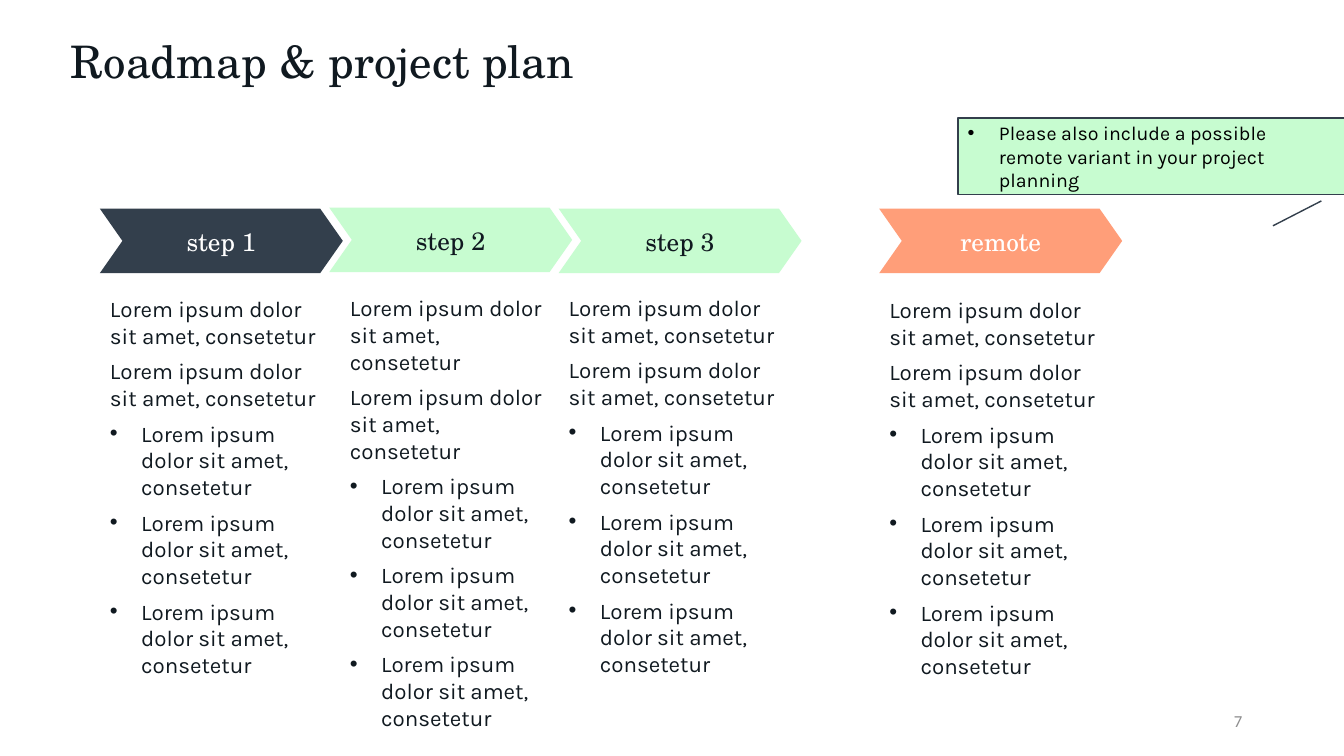
from dataclasses import dataclass

from lxml import etree
from pptx import Presentation
from pptx.dml.color import RGBColor
from pptx.enum.shapes import MSO_SHAPE
from pptx.enum.text import MSO_ANCHOR, MSO_AUTO_SIZE, PP_ALIGN
from pptx.oxml.ns import qn
from pptx.util import Inches, Pt

CHEVRON, CALLOUT = MSO_SHAPE.CHEVRON, MSO_SHAPE.LINE_CALLOUT_1
TOP, MIDDLE = MSO_ANCHOR.TOP, MSO_ANCHOR.MIDDLE
LEFT, CENTER, RIGHT = PP_ALIGN.LEFT, PP_ALIGN.CENTER, PP_ALIGN.RIGHT
NO_FIT = MSO_AUTO_SIZE.NONE
COMPARISON = 4  # layout with a title and four body placeholders


@dataclass(frozen=True)
class Theme:
    ink: str = "101920"
    slate: str = "333F4C"
    mint: str = "C7FCD0"
    coral: str = "FF9E79"
    white: str = "FFFFFF"
    black: str = "000000"
    gray: str = "8C8C8D"
    serif: str = "TeX Gyre Schola"
    sans: str = "Karla"
    number: str = "Calibri"
    title_pt: int = 32
    step_pt: int = 18
    body_pt: int = 16
    note_pt: int = 14
    number_pt: int = 12


T = Theme()
LOREM = "Lorem ipsum dolor sit amet, consetetur"
INDENT = 0.31
STEP_W, STEP_H, STEP_PITCH = 2.41, 0.64, 2.275
FIRST_X, REMOTE_X = 0.99, 8.72

# label, left, chevron top, fill, label colour, text left, text top, text width
STEPS = [
    ("step 1", FIRST_X, 2.07, T.slate, T.white, FIRST_X, 2.88, STEP_W),
    ("step 2", FIRST_X + STEP_PITCH, 2.06, T.mint, T.ink, 3.37, 2.87, 2.18),
    ("step 3", FIRST_X + 2 * STEP_PITCH, 2.07, T.mint, T.ink, 5.54, 2.87, STEP_W),
    ("remote", REMOTE_X, 2.07, T.coral, T.white, REMOTE_X, 2.89, STEP_W),
]
COLUMN_H = 4


def place(sp, left, top, width, height):
    box = {"left": left, "top": top, "width": width, "height": height}
    for name, value in box.items():
        setattr(sp, name, Inches(value))


def set_frame(sp, anchor=TOP, inset=None):
    tf = sp.text_frame
    frame = {"word_wrap": True, "auto_size": NO_FIT, "vertical_anchor": anchor}
    margins = {}
    if inset is not None:
        margins = {f"margin_{side}": Inches(inset)
                   for side in ("left", "right", "top", "bottom")}
    for name, value in {**frame, **margins}.items():
        setattr(tf, name, value)
    return tf


def set_bullet(p, bullet):
    pPr = p._p.get_or_add_pPr()
    pPr.set("marL", str(Inches(INDENT) if bullet else 0))
    pPr.set("indent", str(-Inches(INDENT) if bullet else 0))
    if bullet:
        etree.SubElement(pPr, qn("a:buFont")).set("typeface", "Arial")
        etree.SubElement(pPr, qn("a:buChar")).set("char", "•")
    else:
        etree.SubElement(pPr, qn("a:buNone"))


def write(p, text, font, size, color, align=LEFT, spacing=1.0, before=0, bullet=False):
    set_bullet(p, bullet)
    layout = {"alignment": align, "line_spacing": spacing,
              "space_before": Pt(before), "space_after": Pt(0)}
    for name, value in layout.items():
        setattr(p, name, value)
    r = p.add_run()
    r.text = text
    for name, value in {"name": font, "size": Pt(size), "bold": False}.items():
        setattr(r.font, name, value)
    r.font.color.rgb = RGBColor.from_string(color)


def add_shape(s, kind, box, fill, adjustments, line=None):
    sp = s.shapes.add_shape(kind, *map(Inches, box))
    sp.shadow.inherit = False
    sp.fill.solid()
    sp.fill.fore_color.rgb = RGBColor.from_string(fill)
    if line:
        sp.line.color.rgb = RGBColor.from_string(line)
        sp.line.width = Pt(1)
    else:
        sp.line.fill.background()
    for i, value in enumerate(adjustments):
        sp.adjustments[i] = value
    return sp


def add_title(s, text):
    title = s.shapes.title
    place(title, 0.7, 0.39, 9.77, 0.83)
    tf = set_frame(title, inset=0)
    write(tf.paragraphs[0], text, T.serif, T.title_pt, T.ink, spacing=0.9)


def add_note(s, text):
    sp = add_shape(s, CALLOUT, (9.5, 1.17, 3.84, 0.76), T.mint,
                   (1.084, 0.939, 1.409, 0.814), T.slate)
    tf = set_frame(sp, MIDDLE)
    write(tf.paragraphs[0], text, T.sans, T.note_pt, T.black, bullet=True)


def add_step(s, label, left, top, fill, color):
    sp = add_shape(s, CHEVRON, (left, top, STEP_W, STEP_H), fill, (0.35,))
    tf = set_frame(sp, MIDDLE, 0.04)
    write(tf.paragraphs[0], label, T.serif, T.step_pt, color, CENTER, 1.06)


def fill_column(body, left, top, width):
    place(body, left, top, width, COLUMN_H)
    tf = set_frame(body)
    for i in range(5):
        p = tf.add_paragraph() if i else tf.paragraphs[0]
        write(p, LOREM, T.sans, T.body_pt, T.ink,
              before=6 if i else 0, bullet=i >= 2)


def add_page_number(s, number):
    sp = s.shapes.add_textbox(*map(Inches, (9.42, 6.95, 3, 0.4)))
    tf = set_frame(sp, MIDDLE)
    write(tf.paragraphs[0], number, T.number, T.number_pt, T.gray, RIGHT)


def main():
    prs = Presentation()
    prs.slide_width, prs.slide_height = Inches(13.33), Inches(7.5)
    s = prs.slides.add_slide(prs.slide_layouts[COMPARISON])

    # Heading and reminder
    add_title(s, "Roadmap & project plan")
    add_note(s, "Please also include a possible remote variant in your project planning")

    # One chevron and one list for each step
    for idx, step in enumerate(STEPS, start=1):
        label, left, top, fill, color, *column = step
        add_step(s, label, left, top, fill, color)
        fill_column(s.placeholders[idx], *column)

    add_page_number(s, "7")
    prs.save("out.pptx")


if __name__ == "__main__":
    main()
